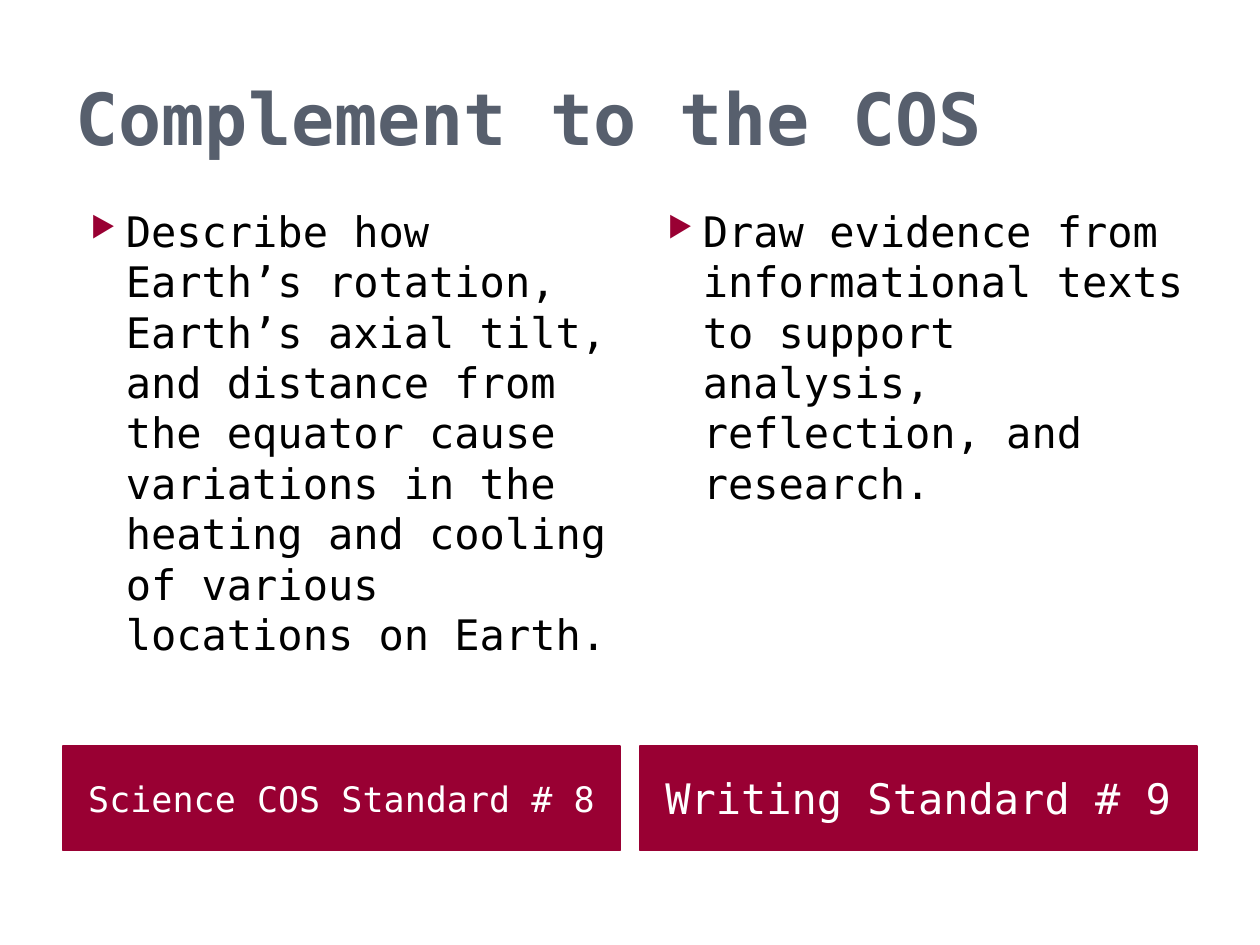
from dataclasses import dataclass

from lxml.etree import SubElement
from pptx import Presentation
from pptx.dml.color import RGBColor
from pptx.enum.shapes import MSO_SHAPE
from pptx.enum.text import MSO_ANCHOR, PP_ALIGN
from pptx.oxml.ns import qn
from pptx.util import Inches, Pt


@dataclass(frozen=True)
class Theme:
    font: str = "DejaVu Sans Mono"
    slate: str = "575F6D"
    wine: str = "990033"
    white: str = "FFFFFF"
    black: str = "000000"
    title: int = 41
    body: int = 24
    small: int = 20


THEME = Theme()


def style(para, size, color, bold=False):
    para.alignment = PP_ALIGN.LEFT
    font = para.font
    font.name = THEME.font
    font.size = Pt(size)
    font.bold = bold
    font.color.rgb = RGBColor.from_string(color)


def add_box(slide, left, top, width, height, text):
    box = slide.shapes.add_textbox(
        Inches(left), Inches(top), Inches(width), Inches(height))
    frame = box.text_frame
    frame.word_wrap = True
    frame.text = text
    return frame


def add_bullet(para):
    props = para._p.get_or_add_pPr()
    props.set("marL", str(Inches(0.4)))
    props.set("indent", str(Inches(-0.28)))
    color = SubElement(props, qn("a:buClr"))
    SubElement(color, qn("a:srgbClr"), val=THEME.wine)
    SubElement(props, qn("a:buSzPct"), val="68000")
    SubElement(props, qn("a:buChar"), char="▶")


def add_title(slide, left, top, width, height, text):
    frame = add_box(slide, left, top, width, height, text)
    frame.vertical_anchor = MSO_ANCHOR.MIDDLE
    style(frame.paragraphs[0], THEME.title, THEME.slate, True)


def add_label(slide, left, top, width, height, text, size):
    bar = slide.shapes.add_shape(
        MSO_SHAPE.RECTANGLE,
        Inches(left), Inches(top), Inches(width), Inches(height))
    bar.shadow.inherit = False
    wine = RGBColor.from_string(THEME.wine)
    bar.fill.solid()
    bar.fill.fore_color.rgb = wine
    bar.line.color.rgb = wine
    bar.line.width = Pt(0.75)
    frame = bar.text_frame
    frame.word_wrap = True
    frame.vertical_anchor = MSO_ANCHOR.MIDDLE
    frame.margin_left = Inches(0.2)
    frame.text = text
    style(frame.paragraphs[0], size, THEME.white)


def add_column(slide, left, top, width, height, text, label, size):
    gap, foot = 0.03, 0.83
    body = height - gap - foot
    frame = add_box(slide, left, top, width, body, text)
    para = frame.paragraphs[0]
    add_bullet(para)
    style(para, THEME.body, THEME.black)
    add_label(slide, left, top + body + gap, width, foot, label, size)


def main():
    deck = Presentation()
    deck.slide_width, deck.slide_height = Inches(10), Inches(7.5)
    slide = deck.slides.add_slide(deck.slide_layouts[6])
    left, width, gap = 0.5, 9, 0.16
    add_title(slide, left, 0.3, width, 1.25, "Complement to the COS")
    columns = [
        ("Describe how Earth’s rotation, Earth’s axial tilt, and distance "
         "from the equator cause variations in the heating and cooling of "
         "various locations on Earth.",
         "Science COS Standard # 8", THEME.small),
        ("Draw evidence from informational texts to support analysis, "
         "reflection, and research.",
         "Writing Standard # 9", THEME.body),
    ]
    span = (width - gap) / 2
    for i, (text, label, size) in enumerate(columns):
        add_column(slide, left + i * (span + gap), 1.58, span, 5.17,
                   text, label, size)
    deck.save("out.pptx")


if __name__ == "__main__":
    main()
